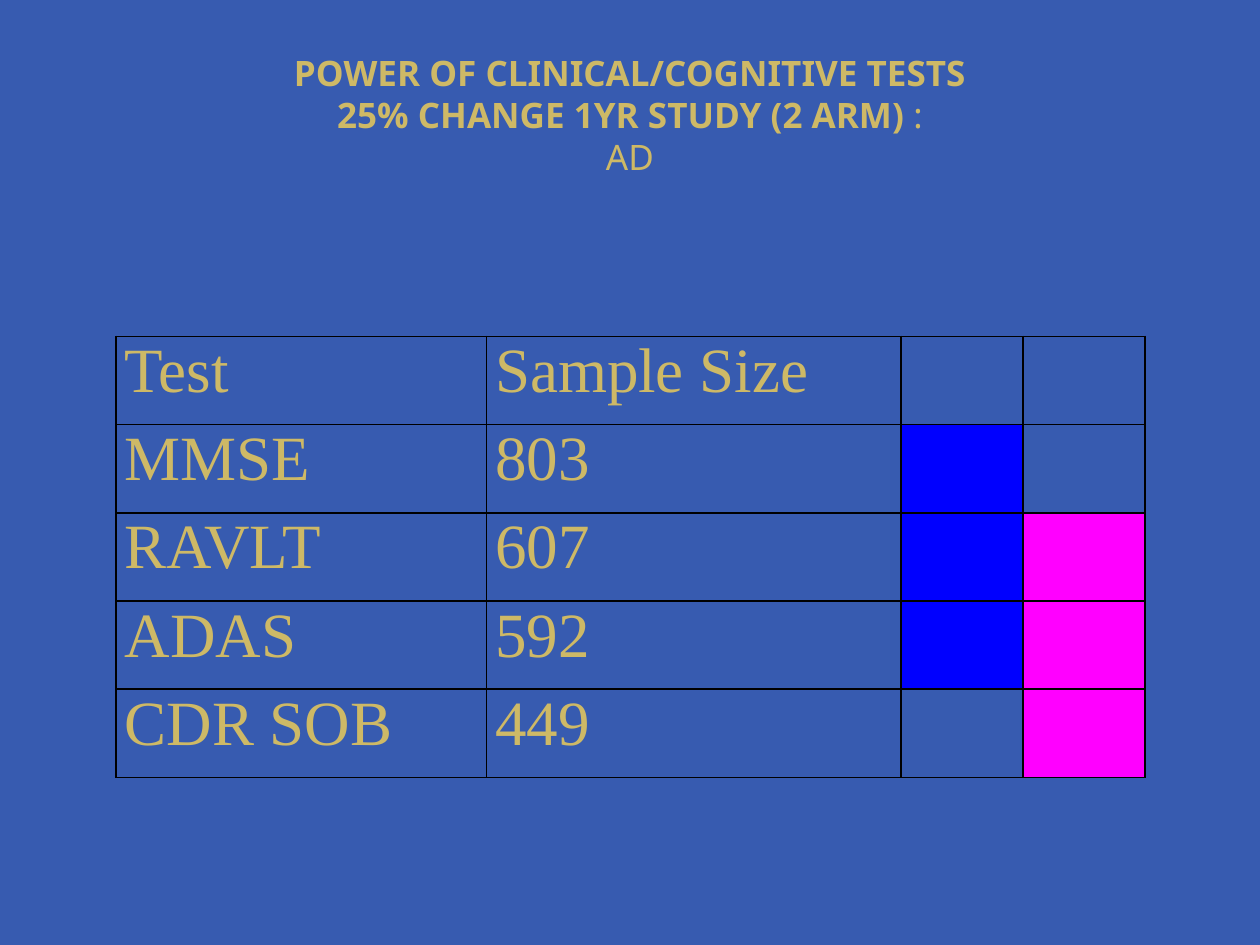
from lxml import etree
from pptx import Presentation, util as u
from pptx.dml.color import RGBColor
from pptx.enum import text
from pptx.oxml.ns import qn

BLUE = RGBColor(0x37, 0x5B, 0xB0)
GOLD = RGBColor(0xCE, 0xB9, 0x66)
BAR_BLUE = RGBColor(0x00, 0x00, 0xFF)
BAR_PINK = RGBColor(0xFF, 0x00, 0xFF)
BLACK = RGBColor(0x00, 0x00, 0x00)

W, H = u.Inches(10), u.Inches(7.5)
COLUMNS = (2.94, 3.29, 0.97, 0.97)
ROWS = (
    ("Test", "Sample Size", None, None),
    ("MMSE", "803", BAR_BLUE, None),
    ("RAVLT", "607", BAR_BLUE, BAR_PINK),
    ("ADAS", "592", BAR_BLUE, BAR_PINK),
    ("CDR SOB", "449", None, BAR_PINK),
)


def add_text(p, content, size=20, font="Noto Sans", color=GOLD, bold=False):
    """Append a formatted run to a paragraph."""
    r = p.add_run()
    r.text = content
    r.font.size, r.font.name, r.font.bold = u.Pt(size), font, bold
    r.font.color.rgb = color


def add_borders(cell, color=BLACK, width=1):
    """Draw a solid line on all four sides of a cell."""
    props = cell._tc.get_or_add_tcPr()
    for i, side in enumerate(("a:lnL", "a:lnR", "a:lnT", "a:lnB")):
        ln = etree.Element(qn(side), w=str(u.Pt(width)))
        fill = etree.SubElement(ln, qn("a:solidFill"))
        etree.SubElement(fill, qn("a:srgbClr"), val=str(color))
        props.insert(i, ln)


def add_title(s, x, y, w, h):
    """Place the centred heading in the given box."""
    tf = s.shapes.add_textbox(x, y, w, h).text_frame
    tf.word_wrap = True
    tf.margin_top = u.Inches(0.08)
    p = tf.paragraphs[0]
    add_text(p, "POWER OF CLINICAL/COGNITIVE TESTS", bold=True)
    p.add_line_break()
    add_text(p, "25% CHANGE 1YR STUDY (2 ARM) ", bold=True)
    add_text(p, ":")
    add_text(tf.add_paragraph(), "AD")
    for p in tf.paragraphs:
        p.alignment = text.PP_ALIGN.CENTER
        p.line_spacing = u.Pt(24)


def add_results(s, x, y, w, h):
    """Place the sample size table with its coloured bars in the given box."""
    table = s.shapes.add_table(len(ROWS), len(COLUMNS), x, y, w, h).table
    table.first_row = table.horz_banding = False
    for column, share in zip(table.columns, COLUMNS):
        column.width = int(w * share / sum(COLUMNS))
    for row, values in zip(table.rows, ROWS):
        row.height = int(h / len(ROWS))
        for cell, value in zip(row.cells, values):
            cell.margin_left = cell.margin_right = u.Inches(0.07)
            cell.margin_top = cell.margin_bottom = 0
            cell.fill.background()
            if isinstance(value, RGBColor):
                cell.fill.solid()
                cell.fill.fore_color.rgb = value
            elif value:
                add_text(cell.text_frame.paragraphs[0], value,
                         size=36, font="Times New Roman")
            add_borders(cell)


def main():
    """Build the slide and save it."""
    prs = Presentation()
    prs.slide_width, prs.slide_height = W, H
    s = prs.slides.add_slide(prs.slide_layouts[6])
    s.background.fill.solid()
    s.background.fill.fore_color.rgb = BLUE
    add_results(s, u.Inches(0.92), u.Inches(2.67), u.Inches(8.17), u.Inches(3.5))
    add_title(s, 0, u.Inches(0.33), W, u.Inches(1.11))
    prs.save("out.pptx")


if __name__ == "__main__":
    main()
